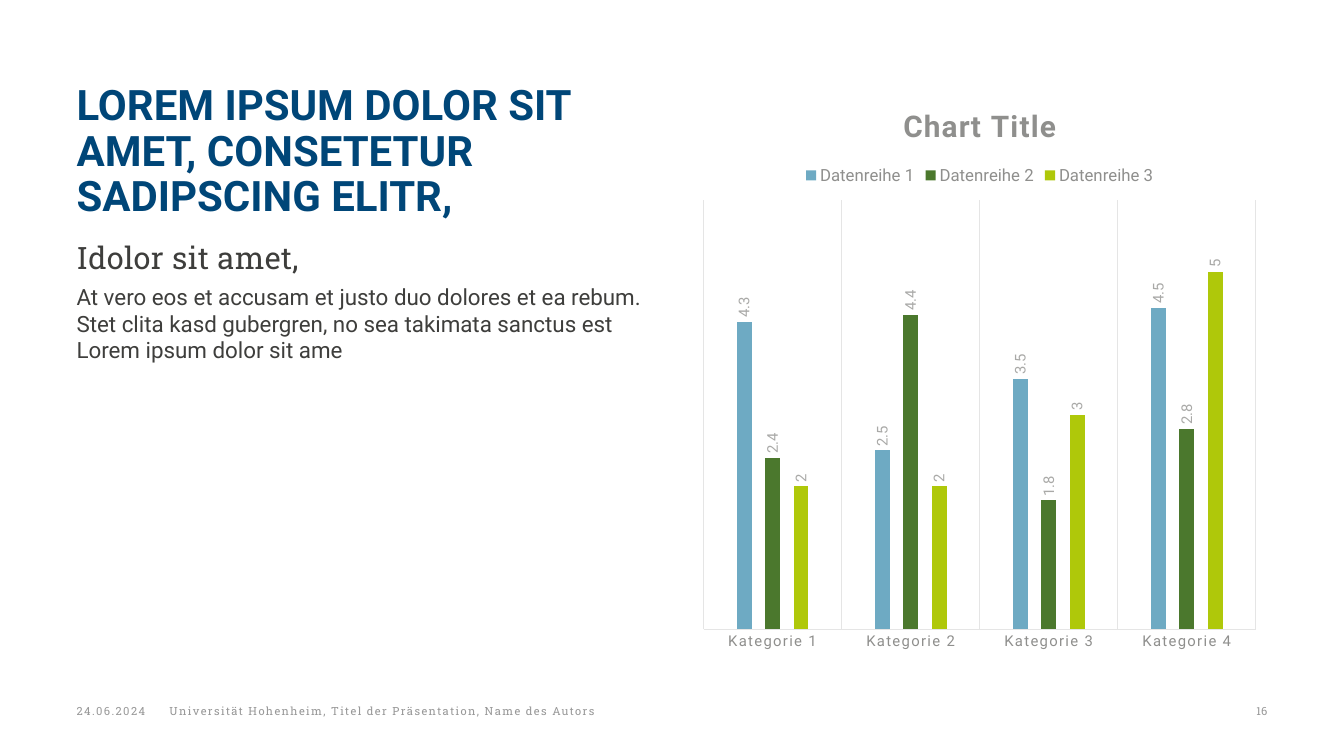
from lxml.etree import SubElement
from pptx import Presentation
from pptx.chart.data import CategoryChartData
from pptx.dml.color import RGBColor
from pptx.enum.chart import XL_CHART_TYPE as ChartType
from pptx.enum.chart import XL_LABEL_POSITION as LabelPos
from pptx.enum.chart import XL_LEGEND_POSITION as LegendPos
from pptx.enum.chart import XL_TICK_MARK as TickMark
from pptx.enum.text import MSO_ANCHOR as Anchor
from pptx.enum.text import MSO_AUTO_SIZE as AutoSize
from pptx.enum.text import PP_ALIGN as Align
from pptx.oxml.ns import qn
from pptx.util import Cm, Pt

# Content
HEADLINE = "LOREM IPSUM DOLOR SIT AMET, CONSETETUR SADIPSCING ELITR,"
SUBHEAD = "Idolor sit amet,"
BODY = ("At vero eos et accusam et justo duo dolores et ea rebum. Stet clita kasd "
        "gubergren, no sea takimata sanctus est Lorem ipsum dolor sit ame")
CHART_TITLE = "Chart Title"
CATEGORIES = ["Kategorie 1", "Kategorie 2", "Kategorie 3", "Kategorie 4"]
SERIES = [
    ("Datenreihe 1", (4.3, 2.5, 3.5, 4.5), "6EAAC3"),
    ("Datenreihe 2", (2.4, 4.4, 1.8, 2.8), "4B782D"),
    ("Datenreihe 3", (2, 2, 3, 5), "AFC80A"),
]
MARGIN, TOP, COLUMN = 1.93, 2.13, 14.5
SLIDE_W, SLIDE_H = 33.87, 19.05
RIGHT = SLIDE_W - MARGIN
# Footer: text, left, width, alignment, letter spacing
FOOTER = [
    ("24.06.2024", MARGIN, 1.98, Align.LEFT, 1),
    ("Universität Hohenheim, Titel der Präsentation, Name des Autors",
     4.27, 25, Align.LEFT, 1),
    ("16", RIGHT - 2.31, 2.31, Align.RIGHT, 0),
]
FOOTER_TOP, FOOTER_H = 17.17, 1.52

# Formats
SANS, SLAB = "Roboto", "Roboto Slab"
GREY, LINE, DARK = "8F8F8D", "E5E5E5", "3E3E3C"
HEADLINE_FONT = dict(name=SANS, size=Pt(30), bold=True, color="004678")
SUBHEAD_FONT = dict(name=SLAB, size=Pt(22), color=DARK)
BODY_FONT = dict(name=SANS, size=Pt(16), color=DARK)
FOOTER_FONT = dict(name=SLAB, size=Pt(8), color="989898")
CHART_FONT = dict(name=SANS, size=Pt(10), color="525250")
CHART_TITLE_FONT = dict(name=SANS, size=Pt(21.3), bold=True, color=GREY)
LEGEND_FONT = dict(name=SANS, size=Pt(12), color=GREY)
CATEGORY_FONT = dict(name=SANS, size=Pt(10.6), bold=False, color=GREY)
VALUE_FONT = dict(name=SANS, size=Pt(10.6), bold=False, color="A9A9A7")


def rgb(value):
    return RGBColor.from_string(value)


def style(font, formats):
    for key, value in formats.items():
        if key == "color":
            font.color.rgb = rgb(value)
        else:
            setattr(font, key, value)


def add_run(paragraph, text, formats, spacing=0):
    run = paragraph.add_run()
    run.text = text
    style(run.font, formats)
    if spacing:
        run._r.get_or_add_rPr().set("spc", str(round(spacing * 100)))


def place(shape, left, top, width, height):
    box = dict(left=left, top=top, width=width, height=height)
    for key, value in box.items():
        setattr(shape, key, Cm(value))


def plain_frame(shape, anchor):
    frame = shape.text_frame
    formats = dict(margin_left=0, margin_top=0, margin_right=0, margin_bottom=0,
                   word_wrap=True, auto_size=AutoSize.NONE, vertical_anchor=anchor)
    for key, value in formats.items():
        setattr(frame, key, value)
    return frame


def add_text(slide, left, top, width, height, anchor):
    box = slide.shapes.add_textbox(Cm(left), Cm(top), Cm(width), Cm(height))
    return plain_frame(box, anchor)


def add_headline(slide):
    title = slide.shapes.title
    place(title, MARGIN, TOP, COLUMN, 2.9)
    paragraph = plain_frame(title, Anchor.TOP).paragraphs[0]
    paragraph.alignment = Align.LEFT
    paragraph.line_spacing = 0.9
    add_run(paragraph, HEADLINE, HEADLINE_FONT)


def add_body(slide):
    frame = add_text(slide, MARGIN, 6.02, COLUMN, 10.7, Anchor.TOP)
    add_run(frame.paragraphs[0], SUBHEAD, SUBHEAD_FONT, 0.3)
    body = frame.add_paragraph()
    body.space_before = body.space_after = Pt(5)
    add_run(body, BODY, BODY_FONT)


def add_footer(slide):
    for text, left, width, alignment, spacing in FOOTER:
        frame = add_text(slide, left, FOOTER_TOP, width, FOOTER_H, Anchor.MIDDLE)
        frame.paragraphs[0].alignment = alignment
        add_run(frame.paragraphs[0], text, FOOTER_FONT, spacing)


def fix_plot_area(chart, **fractions):
    plot_area = chart._chartSpace.find(".//" + qn("c:plotArea"))
    layout = plot_area.find(qn("c:layout"))
    if layout is None:
        layout = SubElement(plot_area, qn("c:layout"))
        plot_area.insert(0, layout)
    manual = SubElement(layout, qn("c:manualLayout"))
    entries = dict(layoutTarget="inner", xMode="edge", yMode="edge", **fractions)
    for key, value in entries.items():
        SubElement(manual, qn("c:" + key)).set("val", str(value))


def add_bar_chart(slide):
    data = CategoryChartData()
    data.categories = CATEGORIES
    for name, values, _ in SERIES:
        data.add_series(name, values)
    chart = slide.shapes.add_chart(
        ChartType.COLUMN_CLUSTERED, Cm(RIGHT - COLUMN), Cm(TOP),
        Cm(COLUMN), Cm(14.6), data).chart
    style(chart.font, CHART_FONT)

    # Title and legend
    chart.has_title = True
    add_run(chart.chart_title.text_frame.paragraphs[0], CHART_TITLE,
            CHART_TITLE_FONT, 1)
    chart.chart_title.include_in_layout = False
    chart.has_legend = True
    chart.legend.position = LegendPos.TOP
    chart.legend.include_in_layout = False
    style(chart.legend.font, LEGEND_FONT)

    # Axes
    category_axis, value_axis = chart.category_axis, chart.value_axis
    category_axis.major_tick_mark = TickMark.NONE
    category_axis.has_major_gridlines = True
    for line in (category_axis.format.line, category_axis.major_gridlines.format.line):
        line.color.rgb = rgb(LINE)
        line.width = Pt(0.75)
    style(category_axis.tick_labels.font, CATEGORY_FONT)
    category_axis._element.find(".//" + qn("a:defRPr")).set("spc", "100")
    value_axis.minimum_scale, value_axis.maximum_scale = 0, 6
    value_axis.has_major_gridlines = False
    value_axis.visible = False

    # Bars with upright value labels
    plot = chart.plots[0]
    plot.gap_width, plot.overlap, plot.vary_by_categories = 444, -90, False
    for series, (_, _, color) in zip(plot.series, SERIES):
        series.format.fill.solid()
        series.format.fill.fore_color.rgb = rgb(color)
        labels = series.data_labels
        labels.show_value = True
        labels.position = LabelPos.OUTSIDE_END
        style(labels.font, VALUE_FONT)
        turned = labels._element.find(".//" + qn("a:bodyPr"))
        turned.set("rot", "-5400000")
        turned.set("vert", "horz")
    fix_plot_area(chart, x=0.02, y=0.2, w=0.96, h=0.74)


def main():
    deck = Presentation()
    deck.slide_width, deck.slide_height = Cm(SLIDE_W), Cm(SLIDE_H)
    slide = deck.slides.add_slide(deck.slide_layouts[5])
    add_headline(slide)
    add_body(slide)
    add_bar_chart(slide)
    add_footer(slide)
    deck.save("out.pptx")


if __name__ == "__main__":
    main()
